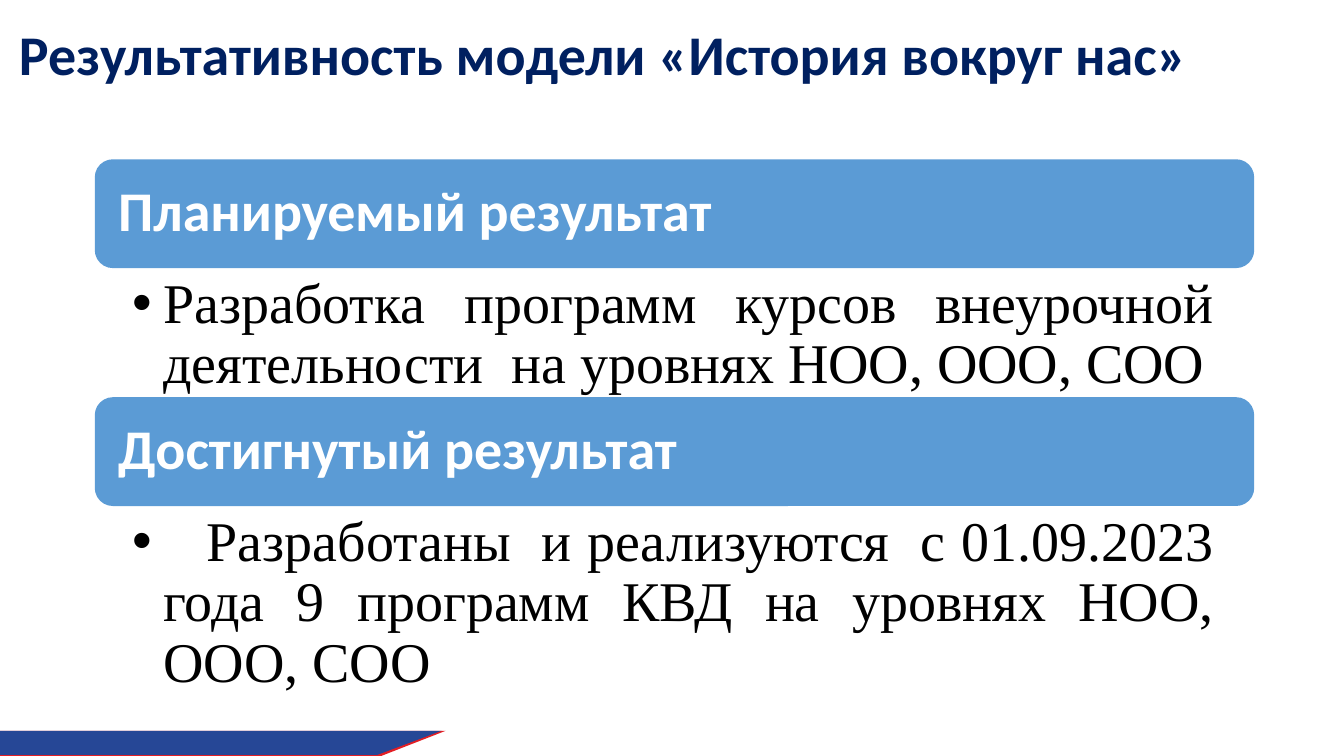
from lxml.etree import SubElement
from pptx import Presentation
from pptx.dml.color import RGBColor as Rgb
from pptx.enum.shapes import MSO_SHAPE as Shape
from pptx.enum.text import MSO_ANCHOR as Anchor, PP_ALIGN as Align
from pptx.oxml.ns import qn
from pptx.util import Inches, Pt

COLORS = {"navy": "002060", "bar": "5B9BD5", "white": "FFFFFF",
          "black": "000000", "red": "E31E24", "blue": "264796"}


def paint(shape, color):
    """Give a shape a flat fill with no line or shadow."""
    shape.shadow.inherit = False
    shape.fill.solid()
    shape.fill.fore_color.rgb = Rgb.from_string(COLORS[color])
    shape.line.fill.background()


def add_bullet(para, hang, tab):
    """Hang a bullet on a paragraph, with an optional tab stop."""
    props = para._p.get_or_add_pPr()
    props.set("marL", str(Inches(hang)))
    props.set("indent", str(-Inches(hang)))
    SubElement(props, qn("a:buFont"), typeface="Arial")
    SubElement(props, qn("a:buChar"), char="•")
    if tab:
        stops = SubElement(props, qn("a:tabLst"))
        SubElement(stops, qn("a:tab"), pos=str(Inches(tab)), algn="l")


def write(shape, text, color="black", font="Calibri", bold=False,
          align=Align.LEFT, anchor=Anchor.MIDDLE,
          pads=(0.1, 0.05, 0.1, 0.05), hang=0, tab=0):
    """Write one formatted paragraph into a shape."""
    frame = shape.text_frame
    frame.word_wrap = True
    frame.vertical_anchor = anchor
    (frame.margin_left, frame.margin_top,
     frame.margin_right, frame.margin_bottom) = map(Inches, pads)
    para = frame.paragraphs[0]
    para.alignment = align
    para.line_spacing = 0.9
    if hang:
        add_bullet(para, hang, tab)
    run = para.add_run()
    run.text = text
    run.font.size = Pt(40)
    run.font.name = font
    run.font.bold = bold
    run.font.color.rgb = Rgb.from_string(COLORS[color])


def add_title(slide, x, y, w, h):
    """Place the slide heading."""
    box = slide.shapes.add_textbox(*map(Inches, (x, y, w, h)))
    write(box, "Результативность модели «История вокруг нас»",
          color="navy", bold=True)


def add_result(slide, x, y, w, h, head, body, tab=0):
    """Place a heading bar with its bulleted text below."""
    bar_h = 1.08
    bar = slide.shapes.add_shape(
        Shape.ROUNDED_RECTANGLE, *map(Inches, (x, y, w, bar_h)))
    paint(bar, "bar")
    write(bar, head, color="white", bold=True, pads=(0.18, 0.1, 0.18, 0.1))
    box = slide.shapes.add_textbox(
        *map(Inches, (x, y + bar_h, w, h - bar_h)))
    write(box, body, font="Times New Roman", align=Align.JUSTIFY,
          anchor=Anchor.TOP, pads=(0.37, 0.07, 0.4, 0.07), hang=0.31, tab=tab)


def add_ribbon(slide, x, y, w, h):
    """Place the slanted red and blue strip."""
    for color, trim in (("red", 0), ("blue", 0.04)):
        right, low = x + w - trim, y + h - trim / 4
        form = slide.shapes.build_freeform(Inches(x), Inches(y))
        form.add_line_segments(
            [(Inches(a), Inches(b)) for a, b in
             ((right, y), (right - 0.64, low), (x, low))])
        paint(form.convert_to_shape(), color)


def main():
    """Build and save the slide."""
    deck = Presentation()
    deck.slide_width, deck.slide_height = Inches(13.33), Inches(7.5)
    slide = deck.slides.add_slide(deck.slide_layouts[6])
    add_ribbon(slide, 0, 7.25, 4.42, 0.25)
    add_title(slide, 0.09, 0.26, 12.93, 0.61)
    add_result(slide, 0.94, 1.58, 11.5, 2.38, "Планируемый результат",
               "Разработка программ курсов внеурочной деятельности"
               "  на уровнях НОО, ООО, СОО")
    add_result(slide, 0.94, 3.94, 11.5, 2.98, "Достигнутый результат",
               "\tРазработаны  и реализуются  с 01.09.2023 года 9 программ"
               " КВД на уровнях НОО, ООО, СОО", tab=0.74)
    deck.save("out.pptx")


if __name__ == "__main__":
    main()
